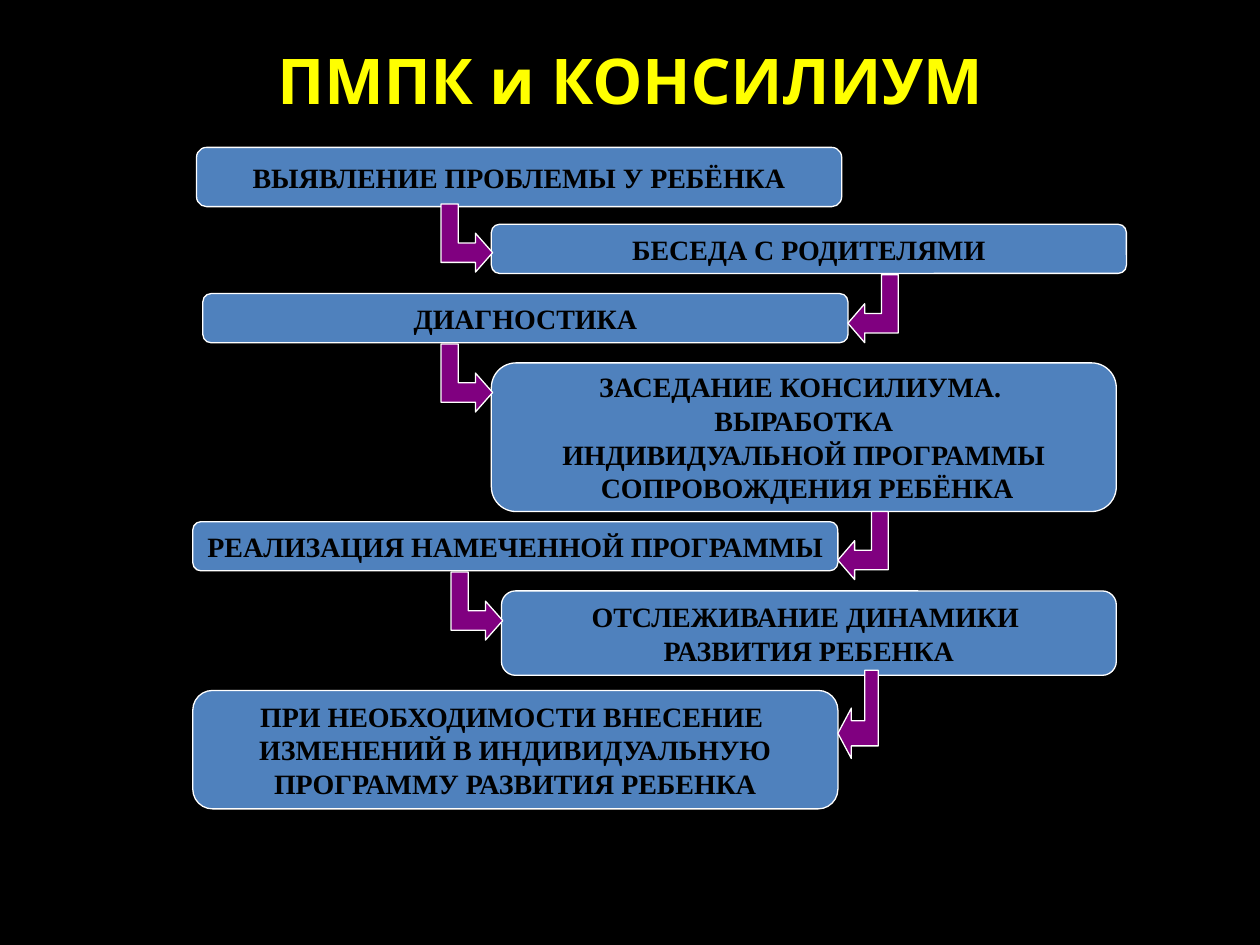
from dataclasses import dataclass

from pptx import Presentation
from pptx.dml.color import RGBColor
from pptx.enum import shapes, text
from pptx.util import Inches, Pt


@dataclass(frozen=True)
class Theme:
    background: RGBColor = RGBColor(0, 0, 0)
    title: RGBColor = RGBColor(255, 255, 0)
    step: RGBColor = RGBColor(0x4F, 0x81, 0xBD)
    step_text: RGBColor = RGBColor(0, 0, 0)
    arrow: RGBColor = RGBColor(0x80, 0, 0x80)
    outline: RGBColor = RGBColor(255, 255, 255)
    outline_width: Pt = Pt(0.75)
    title_font: str = "Noto Sans"
    step_font: str = "Times New Roman"
    title_size: Pt = Pt(36)
    step_size: Pt = Pt(16)


theme = Theme()


def paint(shape, color):
    shape.shadow.inherit = False
    shape.fill.solid()
    shape.fill.fore_color.rgb = color
    shape.line.color.rgb = theme.outline
    shape.line.width = theme.outline_width


def format_text(frame, font, size, color):
    frame.vertical_anchor = text.MSO_ANCHOR.MIDDLE
    for para in frame.paragraphs:
        para.alignment = text.PP_ALIGN.CENTER
        for span in para.runs:
            span.font.name = font
            span.font.size = size
            span.font.bold = True
            span.font.color.rgb = color


deck = Presentation()
deck.slide_width, deck.slide_height = Inches(10), Inches(7.5)
page = deck.slides.add_slide(deck.slide_layouts[5])
page.background.fill.solid()
page.background.fill.fore_color.rgb = theme.background

# Title
title = page.shapes.title
title.left, title.top = Inches(0.5), Inches(0.16)
title.width, title.height = Inches(9), Inches(0.94)
title.text_frame.text = "ПМПК и КОНСИЛИУМ"
format_text(title.text_frame, theme.title_font, theme.title_size, theme.title)

# Steps: left, top, width, height, text
steps = [
    (1.56, 1.17, 5.12, 0.47, "ВЫЯВЛЕНИЕ ПРОБЛЕМЫ У РЕБЁНКА"),
    (3.9, 1.78, 5.04, 0.39, "БЕСЕДА С РОДИТЕЛЯМИ"),
    (1.61, 2.33, 5.12, 0.39, "ДИАГНОСТИКА"),
    (3.9, 2.88, 4.96, 1.18,
     "ЗАСЕДАНИЕ КОНСИЛИУМА. \nВЫРАБОТКА\n"
     "ИНДИВИДУАЛЬНОЙ ПРОГРАММЫ\n СОПРОВОЖДЕНИЯ РЕБЁНКА"),
    (1.53, 4.14, 5.12, 0.39, "РЕАЛИЗАЦИЯ НАМЕЧЕННОЙ ПРОГРАММЫ"),
    (3.98, 4.69, 4.88, 0.67, "ОТСЛЕЖИВАНИЕ ДИНАМИКИ \nРАЗВИТИЯ РЕБЕНКА"),
    (1.53, 5.48, 5.12, 0.94,
     "ПРИ НЕОБХОДИМОСТИ ВНЕСЕНИЕ \nИЗМЕНЕНИЙ В ИНДИВИДУАЛЬНУЮ\n"
     "ПРОГРАММУ РАЗВИТИЯ РЕБЕНКА"),
]
for left, top, width, height, wording in steps:
    box = page.shapes.add_shape(
        shapes.MSO_SHAPE.FLOWCHART_ALTERNATE_PROCESS,
        Inches(left), Inches(top), Inches(width), Inches(height))
    paint(box, theme.step)
    box.text_frame.text = wording
    box.text_frame.word_wrap = False
    format_text(box.text_frame, theme.step_font, theme.step_size, theme.step_text)

# Bent arrows: outline in thirds of the width (from the stem) and sevenths of the height
outline = [(3, 5), (2, 3), (2, 4), (1, 4), (1, 0), (0, 0), (0, 6), (2, 6), (2, 7)]
# Stem edge, top, signed width (negative points left), height
arrows = [
    (3.5, 1.62, 0.41, 0.54),
    (3.58, 4.54, 0.41, 0.54),
    (3.5, 2.73, 0.41, 0.54),
    (7.05, 4.06, -0.4, 0.54),
    (7.13, 2.18, -0.4, 0.54),
    (6.97, 5.32, -0.32, 0.7),
]
for stem, top, width, height in arrows:
    points = [(Inches(stem + width * x / 3), Inches(top + height * y / 7))
              for x, y in outline]
    builder = page.shapes.build_freeform(*points[0])
    builder.add_line_segments(points[1:], close=True)
    paint(builder.convert_to_shape(), theme.arrow)

deck.save("out.pptx")
